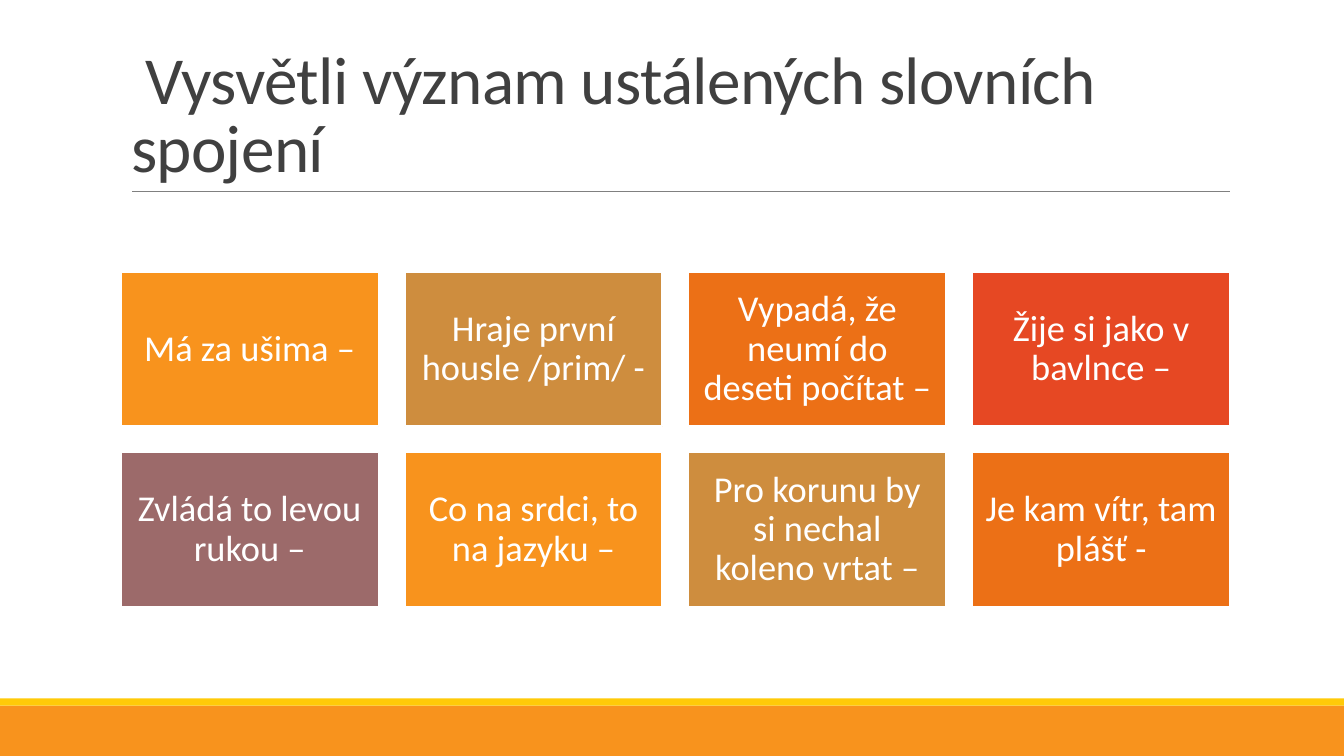
from itertools import cycle

from lxml.etree import SubElement
from pptx import Presentation
from pptx.dml.color import RGBColor
from pptx.enum.shapes import MSO_CONNECTOR, MSO_SHAPE
from pptx.enum.text import MSO_ANCHOR, MSO_AUTO_SIZE, PP_ALIGN
from pptx.oxml.ns import qn
from pptx.util import Inches, Pt

WIDTH, HEIGHT = 13.33, 7.5
FONT = "Calibri"
WHITE = RGBColor(0xFF, 0xFF, 0xFF)
DARK = RGBColor(0x40, 0x40, 0x40)
GREY = RGBColor(0x80, 0x80, 0x80)
YELLOW = RGBColor(0xFF, 0xCA, 0x08)
AMBER = RGBColor(0xF8, 0x93, 0x1D)
OCHRE = RGBColor(0xCE, 0x8D, 0x3E)
ORANGE = RGBColor(0xEC, 0x70, 0x16)
RED = RGBColor(0xE6, 0x48, 0x23)
MAUVE = RGBColor(0x9C, 0x6A, 0x6A)
CARD_COLOURS = (AMBER, OCHRE, ORANGE, RED, MAUVE)

TITLE = " Vysvětli význam ustálených slovních spojení"
IDIOMS = (
    "Má za ušima –",
    "Hraje první housle /prim/ -",
    "Vypadá, že neumí do deseti počítat –",
    "Žije si jako v bavlnce –",
    "Zvládá to levou rukou –",
    "Co na srdci, to na jazyku –",
    "Pro korunu by si nechal koleno vrtat –",
    "Je kam vítr, tam plášť -",
)
COLUMNS, ROWS, GAP = 4, 2, 0.26


def add_rectangle(slide, left, top, width, height, colour):
    shape = slide.shapes.add_shape(
        MSO_SHAPE.RECTANGLE, Inches(left), Inches(top), Inches(width), Inches(height)
    )
    shape.shadow.inherit = False
    shape.fill.solid()
    shape.fill.fore_color.rgb = colour
    shape.line.fill.background()
    return shape


def add_footer_bands(slide, left, top, width, height):
    stripe = 0.07
    add_rectangle(slide, left, top + stripe, width, height - stripe, AMBER)
    add_rectangle(slide, left, top, width, stripe, YELLOW)


def add_title(slide, left, top, width, height):
    """Fill the title placeholder and underline it along the bottom of its box."""
    title = slide.shapes.title
    title.left, title.top = Inches(left), Inches(top)
    title.width, title.height = Inches(width), Inches(height)
    frame = title.text_frame
    frame.text = TITLE
    frame.word_wrap = True
    frame.auto_size = MSO_AUTO_SIZE.NONE
    frame.vertical_anchor = MSO_ANCHOR.BOTTOM
    paragraph = frame.paragraphs[0]
    paragraph.alignment = PP_ALIGN.LEFT
    paragraph.line_spacing = 0.85
    paragraph.font.name = FONT
    paragraph.font.size = Pt(48)
    paragraph.font.color.rgb = DARK
    paragraph.runs[0].font._element.set("spc", "-50")

    bottom = Inches(top + height)
    rule = slide.shapes.add_connector(
        MSO_CONNECTOR.STRAIGHT, Inches(left + 0.11), bottom, Inches(left + width), bottom
    )
    rule.line.color.rgb = GREY
    rule.line.width = Pt(0.5)
    SubElement(rule._element.spPr, qn("a:effectLst"))


def add_card(slide, left, top, width, height, text, colour):
    card = add_rectangle(slide, left, top, width, height, colour)
    card.line.color.rgb = WHITE
    card.line.width = Pt(1.25)
    frame = card.text_frame
    frame.text = text
    frame.word_wrap = True
    frame.vertical_anchor = MSO_ANCHOR.MIDDLE
    frame.margin_left = frame.margin_right = Inches(0.11)
    frame.margin_top = frame.margin_bottom = Inches(0.11)
    paragraph = frame.paragraphs[0]
    paragraph.alignment = PP_ALIGN.CENTER
    paragraph.line_spacing = 0.9
    paragraph.font.name = FONT
    paragraph.font.size = Pt(26)
    paragraph.font.color.rgb = WHITE


def add_idiom_grid(slide, left, top, width, height):
    card_width = (width - GAP * (COLUMNS - 1)) / COLUMNS
    card_height = (height - GAP * (ROWS - 1)) / ROWS
    for index, (idiom, colour) in enumerate(zip(IDIOMS, cycle(CARD_COLOURS))):
        row, column = divmod(index, COLUMNS)
        add_card(
            slide,
            left + column * (card_width + GAP),
            top + row * (card_height + GAP),
            card_width,
            card_height,
            idiom,
            colour,
        )


def main():
    presentation = Presentation()
    presentation.slide_width = Inches(WIDTH)
    presentation.slide_height = Inches(HEIGHT)
    slide = presentation.slides.add_slide(presentation.slide_layouts.get_by_name("Title Only"))
    add_footer_bands(slide, 0, 6.93, WIDTH, HEIGHT - 6.93)
    add_title(slide, 1.2, 0.31, 11, 1.59)
    add_idiom_grid(slide, 1.2, 2.7, 11, 3.32)
    presentation.save("out.pptx")


if __name__ == "__main__":
    main()
